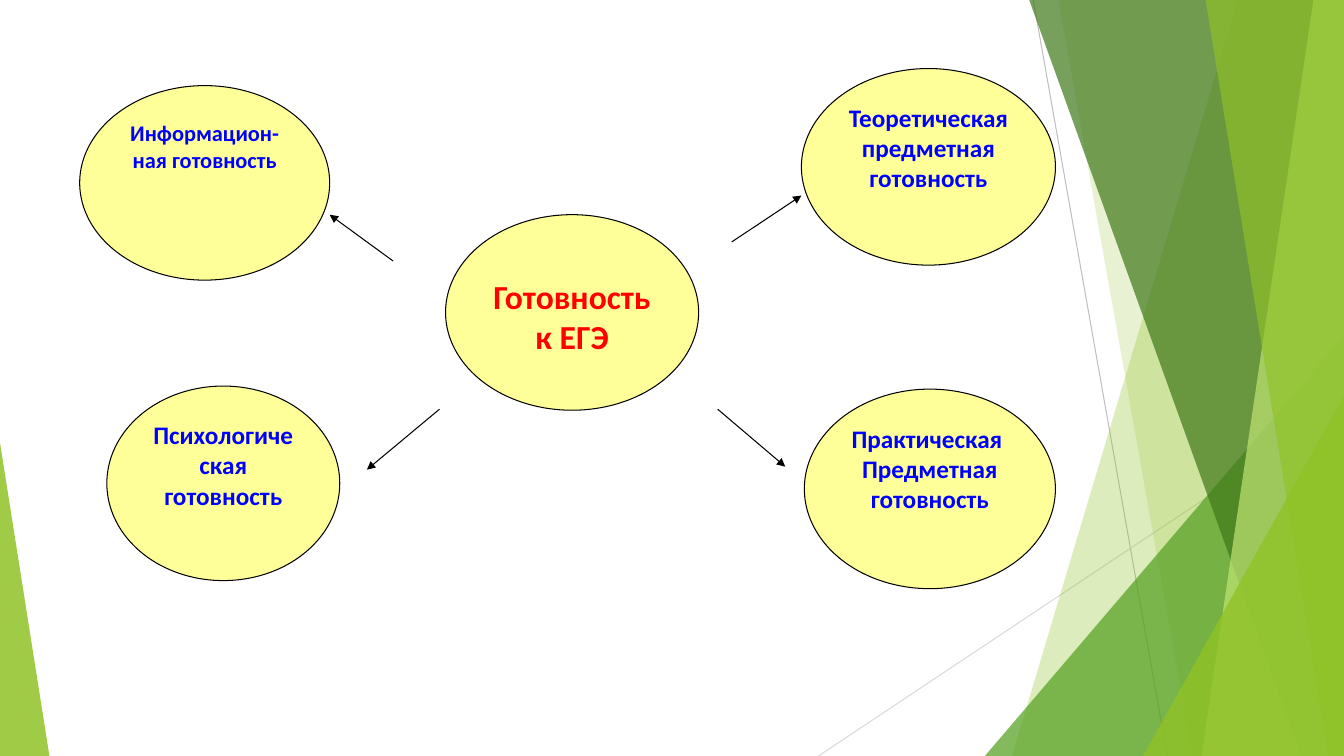
from dataclasses import dataclass

from lxml import etree
from pptx import Presentation
from pptx import util as u
from pptx.dml import color
from pptx.enum import shapes, text
from pptx.oxml import ns

WIDTH, HEIGHT = u.Inches(13.333), u.Inches(7.5)
Point = tuple[float, float]


@dataclass
class Facet:
    top: float
    bottom: float
    fill: str
    opacity: int


@dataclass
class Corner:
    left: float
    top: float
    width: float
    peak: float
    fill: str
    opacity: int


@dataclass
class Bubble:
    left: float
    top: float
    width: float
    height: float
    paragraphs: list[str]
    size: int = 18
    font: str = "0000FF"
    inset: float = 0.05


@dataclass
class Line:
    start: Point
    end: Point
    stroke: str = "000000"
    arrow: bool = False


BACKDROP = [
    Line((76.88, 0), (86.85, 100), "BFBFBF"),
    Line((100, 53.73), (60.9, 100), "D9D9D9"),
    Facet(92.1, 75.3, "90C226", 30),
    Facet(78.75, 88.73, "90C226", 20),
    Corner(73.28, 44.4, 26.72, 1, "54A021", 72),
    Facet(76.58, 96.83, "3F7819", 70),
    Facet(97.73, 89.4, "C0E474", 70),
    Facet(89.7, 98.85, "90C226", 65),
    Corner(85.05, 52.4, 14.95, 1, "90C226", 80),
    Corner(0, 58.53, 3.68, 0, "90C226", 85),
]

BUBBLES = [
    Bubble(33.15, 28.4, 18.83, 25.87, ["Готовность к ЕГЭ"], 24, "FF0000", 0.32),
    Bubble(5.93, 11.33, 18.6, 25.73, ["Информацион-ная готовность"], 16),
    Bubble(59.63, 9.07, 18.9, 26, ["Теоретическая предметная готовность"]),
    Bubble(7.95, 51.07, 17.33, 25.73, ["Психологическая готовность"]),
    Bubble(59.85, 51.47, 18.68, 26.4, ["Практическая ", "Предметная готовность"]),
]

ARROWS = [
    Line((54.45, 32), (59.63, 25.87), arrow=True),
    Line((29.25, 34.53), (24.53, 28.4), arrow=True),
    Line((32.7, 54.13), (27.3, 62.13), arrow=True),
    Line((53.4, 54.13), (58.43, 61.73), arrow=True),
]


def across(percent: float) -> int:
    return round(WIDTH * percent / 100)


def down(percent: float) -> int:
    return round(HEIGHT * percent / 100)


def paint(fmt, hex_color: str) -> None:
    fmt.solid()
    fmt.fore_color.rgb = color.RGBColor.from_string(hex_color)


def style_pane(sp, fill: str, opacity: int) -> None:
    sp.shadow.inherit = False
    paint(sp.fill, fill)
    sp.line.fill.background()
    rgb = sp.fill._xPr.find(".//" + ns.qn("a:srgbClr"))
    etree.SubElement(rgb, ns.qn("a:alpha"), val=str(opacity * 1000))


def draw_facet(s, facet: Facet) -> None:
    builder = s.shapes.build_freeform(across(facet.top), 0)
    builder.add_line_segments(
        [(WIDTH, 0), (WIDTH, HEIGHT), (across(facet.bottom), HEIGHT)], close=True
    )
    style_pane(builder.convert_to_shape(), facet.fill, facet.opacity)


def draw_corner(s, corner: Corner) -> None:
    sp = s.shapes.add_shape(
        shapes.MSO_SHAPE.ISOSCELES_TRIANGLE,
        across(corner.left), down(corner.top),
        across(corner.width), down(100 - corner.top),
    )
    sp.adjustments[0] = corner.peak
    style_pane(sp, corner.fill, corner.opacity)


def draw_line(s, line: Line) -> None:
    (x1, y1), (x2, y2) = line.start, line.end
    cxn = s.shapes.add_connector(
        shapes.MSO_CONNECTOR.STRAIGHT, across(x1), down(y1), across(x2), down(y2)
    )
    paint(cxn.line.fill, line.stroke)
    cxn.line.width = u.Pt(0.75)
    if line.arrow:
        etree.SubElement(cxn.line._get_or_add_ln(), ns.qn("a:tailEnd"), type="triangle")
    etree.SubElement(cxn._element.spPr, ns.qn("a:effectLst"))


def draw_bubble(s, bubble: Bubble) -> None:
    sp = s.shapes.add_shape(
        shapes.MSO_SHAPE.OVAL,
        across(bubble.left), down(bubble.top),
        across(bubble.width), down(bubble.height),
    )
    sp.shadow.inherit = False
    paint(sp.fill, "FFFF99")
    paint(sp.line.fill, "000000")
    sp.line.width = u.Pt(0.75)
    tf = sp.text_frame
    tf.word_wrap = True
    tf.vertical_anchor = text.MSO_ANCHOR.TOP
    tf.margin_top = u.Inches(bubble.inset)
    for i, words in enumerate(bubble.paragraphs):
        p = tf.add_paragraph() if i else tf.paragraphs[0]
        p.alignment = text.PP_ALIGN.CENTER
        r = p.add_run()
        r.text = words
        r.font.name = "Calibri"
        r.font.size = u.Pt(bubble.size)
        r.font.bold = True
        paint(r.font.fill, bubble.font)


def main() -> None:
    prs = Presentation()
    prs.slide_width, prs.slide_height = WIDTH, HEIGHT
    s = prs.slides.add_slide(prs.slide_layouts[6])
    draw = {Line: draw_line, Facet: draw_facet, Corner: draw_corner, Bubble: draw_bubble}
    for item in BACKDROP + BUBBLES + ARROWS:
        draw[type(item)](s, item)
    prs.save("out.pptx")


if __name__ == "__main__":
    main()
